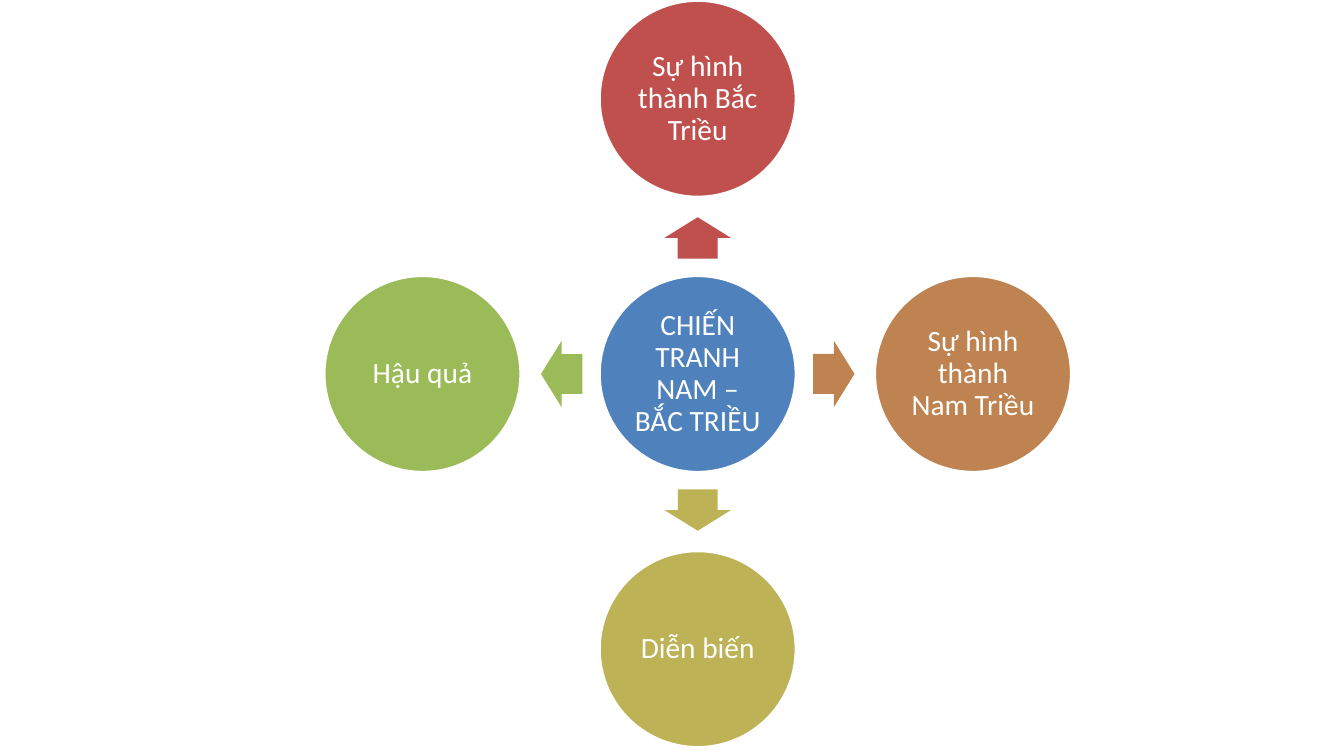
"""Build a radial diagram: a central topic with four arrows to its parts."""
import pptx
import pptx.dml.color
import pptx.enum.shapes
import pptx.enum.text
import pptx.util

Inches = pptx.util.Inches
SHAPES = pptx.enum.shapes.MSO_SHAPE

deck = pptx.Presentation()
deck.slide_width = Inches(13.33)
deck.slide_height = Inches(7.5)
page = deck.slides.add_slide(deck.slide_layouts[6])

CENTRE_X, CENTRE_Y = 6.92, 3.71
PITCH = 2.73
ARROW_REACH = 1.35
DIAMETER = 1.95
ARROW_LENGTH, ARROW_WIDTH = 0.41, 0.66


def paint(color, value):
    color.rgb = pptx.dml.color.RGBColor.from_string(value)


def add_part(text="", *, kind, x, y, width, height, fill, outline=0, size=21):
    part = page.shapes.add_shape(
        kind, Inches(x - width / 2), Inches(y - height / 2), Inches(width), Inches(height))
    part.shadow.inherit = False
    part.fill.solid()
    paint(part.fill.fore_color, fill)
    if outline:
        paint(part.line.color, "FFFFFF")
        part.line.width = pptx.util.Pt(outline)
    else:
        part.line.fill.background()
    if text:
        frame = part.text_frame
        frame.word_wrap = True
        frame.vertical_anchor = pptx.enum.text.MSO_ANCHOR.MIDDLE
        frame.margin_left = frame.margin_right = Inches(0.04)
        frame.margin_top = frame.margin_bottom = Inches(0.03)
        para = frame.paragraphs[0]
        para.alignment = pptx.enum.text.PP_ALIGN.CENTER
        para.line_spacing = 0.9
        span = para.add_run()
        span.text = text
        span.font.name = "Calibri"
        span.font.size = pptx.util.Pt(size)
        paint(span.font.color, "FFFFFF")
    return part


circle = dict(kind=SHAPES.OVAL, width=DIAMETER, height=DIAMETER, outline=2)
add_part("CHIẾN TRANH NAM – BẮC TRIỀU", x=CENTRE_X, y=CENTRE_Y, fill="4F81BD", **circle)

branches = [
    ("Sự hình thành Bắc Triều", "C0504D", 0, -1, 270),
    ("Sự hình thành Nam Triều", "BE8351", 1, 0, 0),
    ("Diễn biến", "BDB255", 0, 1, 90),
    ("Hậu quả", "9BBB59", -1, 0, 180),
]
for label, fill, across, down, angle in branches:
    arrow = add_part(
        kind=SHAPES.RIGHT_ARROW, fill=fill, width=ARROW_LENGTH, height=ARROW_WIDTH,
        x=CENTRE_X + across * ARROW_REACH, y=CENTRE_Y + down * ARROW_REACH)
    arrow.adjustments[0] = 0.6
    arrow.adjustments[1] = 0.5
    arrow.rotation = angle
    add_part(label, x=CENTRE_X + across * PITCH, y=CENTRE_Y + down * PITCH, fill=fill, **circle)

deck.save("out.pptx")
